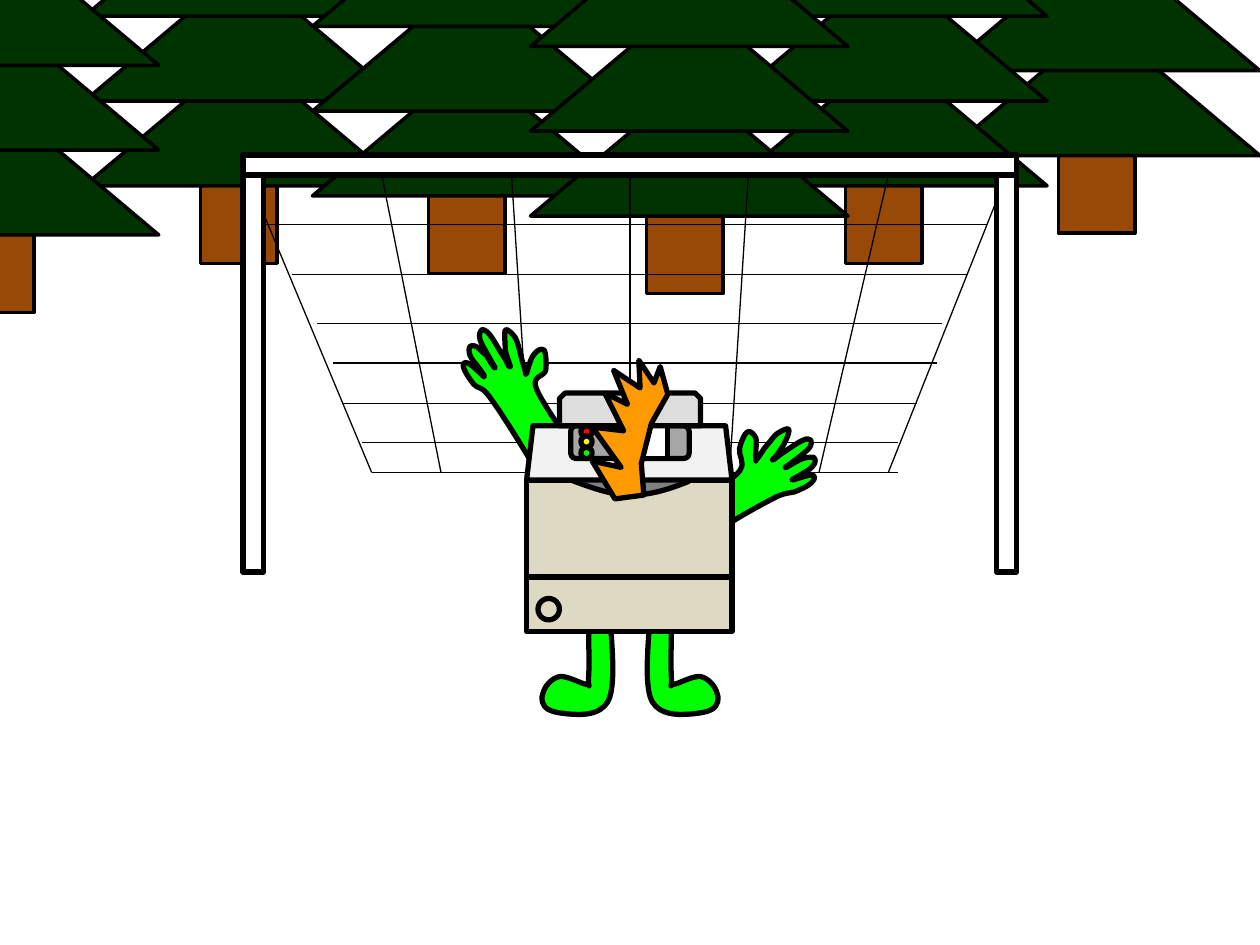
"""Build a slide of a waving copier robot keeping goal in front of a forest."""
from dataclasses import dataclass
from math import cos, radians, sin

from lxml import etree
from pptx import Presentation
from pptx.dml.color import RGBColor
from pptx.enum.shapes import MSO_CONNECTOR, MSO_SHAPE
from pptx.oxml.ns import qn
from pptx.util import Inches, Pt

RECT = MSO_SHAPE.RECTANGLE
ROUNDED = MSO_SHAPE.ROUNDED_RECTANGLE
OVAL = MSO_SHAPE.OVAL
TRIANGLE = MSO_SHAPE.ISOSCELES_TRIANGLE
TRAPEZOID = MSO_SHAPE.TRAPEZOID
SNIPPED = MSO_SHAPE.SNIP_2_SAME_RECTANGLE
STRAIGHT = MSO_CONNECTOR.STRAIGHT
BOTTOM_SITE = 2


@dataclass(frozen=True)
class Theme:
    ink: str = "000000"
    white: str = "FFFFFF"
    trunk: str = "984807"
    leaves: str = "003300"
    limb: str = "00FF00"
    case: str = "DDD9C3"
    slot: str = "808080"
    shoulder: str = "F2F2F2"
    panel: str = "A6A6A6"
    lid: str = "DDDDDD"
    stop: str = "FF0000"
    wait: str = "FFFF00"
    go: str = "00FF00"
    flame: str = "FF9900"
    net_weight: float = 0.75
    tree_weight: float = 2
    bold_weight: float = 3


THEME = Theme()
SLIDE_WIDTH, SLIDE_HEIGHT = Inches(10), Inches(7.5)
COLUMNS = 1000
CELL = SLIDE_WIDTH // COLUMNS

TREES = [(67, 131, 3), (248, 139, 3), (748, 107, 2), (579, 131, 3), (421, 155, 3), (-126, 170, 3)]
TIER_SIZE, TIER_STEP, TIER_RISE = (252, 106), 67.3, 89.5
TRUNK_SIZE, TRUNK_INSET = (61, 78), 92

NET_SIDES = [(193, 131, 295, 375), (799, 139, 705, 375)]
NET_ROWS = [(375, 295, 713), (320, 272, 728), (257, 252, 748), (218, 232, 768),
            (178, 209, 783), (351, 287, 713), (288, 264, 744)]
NET_COLUMNS = [(350, 303), (421, 406), (500, 500), (579, 594), (650, 705)]
NET_BOTTOM, NET_TOP, MIDDLE = 375, 139, 500

POSTS = [(193, 139, 16, 315), (791, 139, 16, 315)]
CROSSBAR = (193, 123, 614, 16)

LEG_FRAME = (429, 485, 59, 82)
LEG = [(484, 489), (486, 515, 488, 540, 484, 553), (480, 566, 466, 567, 460, 567),
       (452, 567, 440, 566, 435, 563), (430, 560, 429, 554, 431, 550),
       (432, 545, 438, 538, 444, 537), (450, 536, 462, 543, 465, 543),
       (469, 543, 467, 548, 467, 539), (468, 529, 467, 507, 467, 485)]

RIGHT_ARM_FRAME, RIGHT_ARM_TURN = (572, 328, 64, 94), 50.6
RIGHT_ARM = [
    (572, 385), (576, 383, 586, 377, 588, 372), (591, 367, 586, 361, 587, 356),
    (588, 351, 591, 344, 593, 343), (595, 341, 599, 345, 600, 348),
    (601, 352, 599, 361, 600, 364), (600, 367, 599, 366, 601, 364),
    (603, 362, 606, 356, 609, 353), (612, 350, 614, 346, 617, 344),
    (620, 342, 626, 339, 626, 341), (627, 343, 623, 352, 620, 356),
    (618, 360, 614, 364, 613, 365), (613, 366, 615, 364, 619, 361),
    (622, 359, 632, 352, 636, 350), (640, 348, 642, 348, 643, 349),
    (644, 350, 645, 353, 641, 357), (638, 360, 625, 370, 623, 371),
    (622, 373, 630, 367, 633, 366), (636, 364, 640, 363, 643, 363),
    (645, 362, 647, 363, 647, 365), (647, 366, 647, 368, 645, 370),
    (643, 373, 638, 375, 635, 377), (632, 379, 627, 381, 629, 381),
    (630, 381, 641, 377, 644, 377), (647, 377, 647, 380, 645, 382),
    (644, 384, 639, 387, 634, 389), (629, 392, 626, 390, 617, 394),
    (607, 399, 583, 412, 577, 417)]

LEFT_ARM_FRAME, LEFT_ARM_TURN = (383, 253, 64, 122), 152.9
LEFT_ARM = [
    (459, 360), (456, 356, 430, 320, 426, 309), (421, 298, 432, 299, 433, 294),
    (434, 289, 433, 280, 432, 278), (430, 276, 426, 278, 424, 281),
    (421, 284, 419, 293, 418, 296), (417, 298, 417, 297, 417, 295),
    (416, 292, 414, 285, 413, 281), (412, 277, 411, 272, 409, 268),
    (407, 265, 402, 260, 401, 262), (400, 264, 401, 274, 401, 278),
    (402, 283, 405, 290, 405, 291), (404, 292, 403, 289, 401, 285),
    (398, 281, 392, 270, 389, 266), (386, 262, 383, 261, 382, 262),
    (381, 263, 380, 265, 381, 270), (383, 275, 392, 290, 393, 292),
    (393, 294, 388, 285, 386, 282), (383, 280, 380, 276, 378, 275),
    (375, 274, 374, 274, 373, 275), (372, 276, 372, 279, 373, 282),
    (374, 285, 378, 289, 380, 292), (382, 295, 386, 299, 384, 299),
    (383, 298, 374, 289, 371, 288), (368, 287, 367, 289, 368, 292),
    (369, 295, 372, 300, 376, 305), (379, 309, 382, 305, 390, 317),
    (399, 329, 423, 368, 427, 376)]

SLOT_FRAME = (453, 381, 94, 13)
SLOT = [(453, 381), (469, 387, 485, 393, 501, 393), (517, 393, 532, 388, 547, 382)]
FLAME_FRAME = (470, 286, 59, 110)
FLAME = [(488, 396), (511, 393), (509, 368), (517, 336), (530, 313), (524, 291),
         (519, 304), (507, 286), (508, 308), (487, 294), (498, 321), (480, 312),
         (495, 342), (470, 339), (493, 371), (470, 366), (488, 396)]

UPPER_CASE = (RECT, (418, 381, 163, 77), THEME.case)
CASE_PARTS = [
    (RECT, (418, 458, 163, 43), THEME.case),
    (TRAPEZOID, (418, 338, 163, 43), THEME.shoulder),
    (ROUNDED, (453, 338, 94, 26), THEME.panel),
    (OVAL, (461, 338, 9, 9), THEME.stop),
    (OVAL, (461, 355, 9, 9), THEME.go),
    (OVAL, (461, 346, 9, 9), THEME.wait),
    (RECT, (487, 338, 43, 26), THEME.white),
    (SNIPPED, (444, 312, 112, 26), THEME.lid),
    (OVAL, (427, 475, 17, 17), None)]
SHOULDER_SLOPE = 0.118


def cells(*values):
    return [round(value * CELL) for value in values]


def paint(shape, colour, weight):
    shape.shadow.inherit = False
    if colour is None:
        shape.fill.background()
    else:
        shape.fill.solid()
        shape.fill.fore_color.rgb = RGBColor.from_string(colour)
    shape.line.color.rgb = RGBColor.from_string(THEME.ink)
    shape.line.width = Pt(weight)
    return shape


def add_part(shapes, kind, frame, colour, weight=THEME.bold_weight):
    shape = paint(shapes.add_shape(kind, *cells(*frame)), colour, weight)
    if kind == TRAPEZOID:
        shape.adjustments[0] = SHOULDER_SLOPE
    return shape


def add_outline(shapes, frame, steps, colour, turn=0, closed=False):
    left, top, width, height = frame
    builder = shapes.build_freeform(*cells(left, top))
    corners = [(left + width, top), (left + width, top + height), (left, top + height)]
    builder.add_line_segments([cells(*corner) for corner in corners])
    shape = paint(builder.convert_to_shape(), colour, THEME.bold_weight)
    outline = next(shape._element.iter(qn("a:path")))
    for child in list(outline):
        outline.remove(child)
    cosine, sine = cos(radians(turn)), sin(radians(turn))
    for index, step in enumerate(steps):
        tag = "a:moveTo" if index == 0 else "a:lnTo" if len(step) == 2 else "a:cubicBezTo"
        command = etree.SubElement(outline, qn(tag))
        for x, y in zip(step[::2], step[1::2]):
            across, down = x - left - width / 2, y - top - height / 2
            local_x, local_y = cells(across * cosine + down * sine + width / 2,
                                     down * cosine - across * sine + height / 2)
            etree.SubElement(command, qn("a:pt"), x=str(local_x), y=str(local_y))
    if closed:
        etree.SubElement(outline, qn("a:close"))
    shape.rotation = turn


def add_trees(shapes):
    for left, base, tiers in TREES:
        add_part(shapes, RECT, (left + TRUNK_INSET, base, *TRUNK_SIZE), THEME.trunk, THEME.tree_weight)
        for tier in range(tiers):
            top = base - TIER_RISE - tier * TIER_STEP
            add_part(shapes, TRIANGLE, (left, top, *TIER_SIZE), THEME.leaves, THEME.tree_weight)


def add_cord(shapes, ends):
    cord = shapes.add_connector(STRAIGHT, *cells(*ends))
    cord.line.color.rgb = RGBColor.from_string(THEME.ink)
    cord.line.width = Pt(THEME.net_weight)
    etree.SubElement(cord._element.spPr, qn("a:effectLst"))
    return cord


def add_goal(shapes):
    net = shapes.add_group_shape().shapes
    rows = [(start, height, end, height) for height, start, end in NET_ROWS]
    for ends in NET_SIDES + rows:
        add_cord(net, ends)
    cords = {low: add_cord(net, (low, NET_BOTTOM, high, NET_TOP)) for low, high in NET_COLUMNS}
    for post in POSTS:
        add_part(shapes, RECT, post, THEME.white)
    crossbar = add_part(shapes, RECT, CROSSBAR, THEME.white)
    cords[MIDDLE].end_connect(crossbar, BOTTOM_SITE)


def mirror(step):
    return [COLUMNS - value if index % 2 == 0 else value for index, value in enumerate(step)]


def add_robot(shapes):
    left, top, width, height = LEG_FRAME
    add_outline(shapes, LEG_FRAME, LEG, THEME.limb)
    add_outline(shapes, (COLUMNS - left - width, top, width, height), [mirror(step) for step in LEG], THEME.limb)
    add_outline(shapes, RIGHT_ARM_FRAME, RIGHT_ARM, THEME.limb, RIGHT_ARM_TURN)
    add_outline(shapes, LEFT_ARM_FRAME, LEFT_ARM, THEME.limb, LEFT_ARM_TURN)
    body = shapes.add_group_shape().shapes
    add_part(body, *UPPER_CASE)
    add_outline(body, SLOT_FRAME, SLOT, THEME.slot)
    for part in CASE_PARTS:
        add_part(body, *part)
    add_outline(body, FLAME_FRAME, FLAME, THEME.flame, closed=True)


def main():
    deck = Presentation()
    deck.slide_width, deck.slide_height = SLIDE_WIDTH, SLIDE_HEIGHT
    page = deck.slides.add_slide(deck.slide_layouts[6])
    add_trees(page.shapes.add_group_shape().shapes)
    add_goal(page.shapes)
    add_robot(page.shapes)
    deck.save("out.pptx")


if __name__ == "__main__":
    main()
